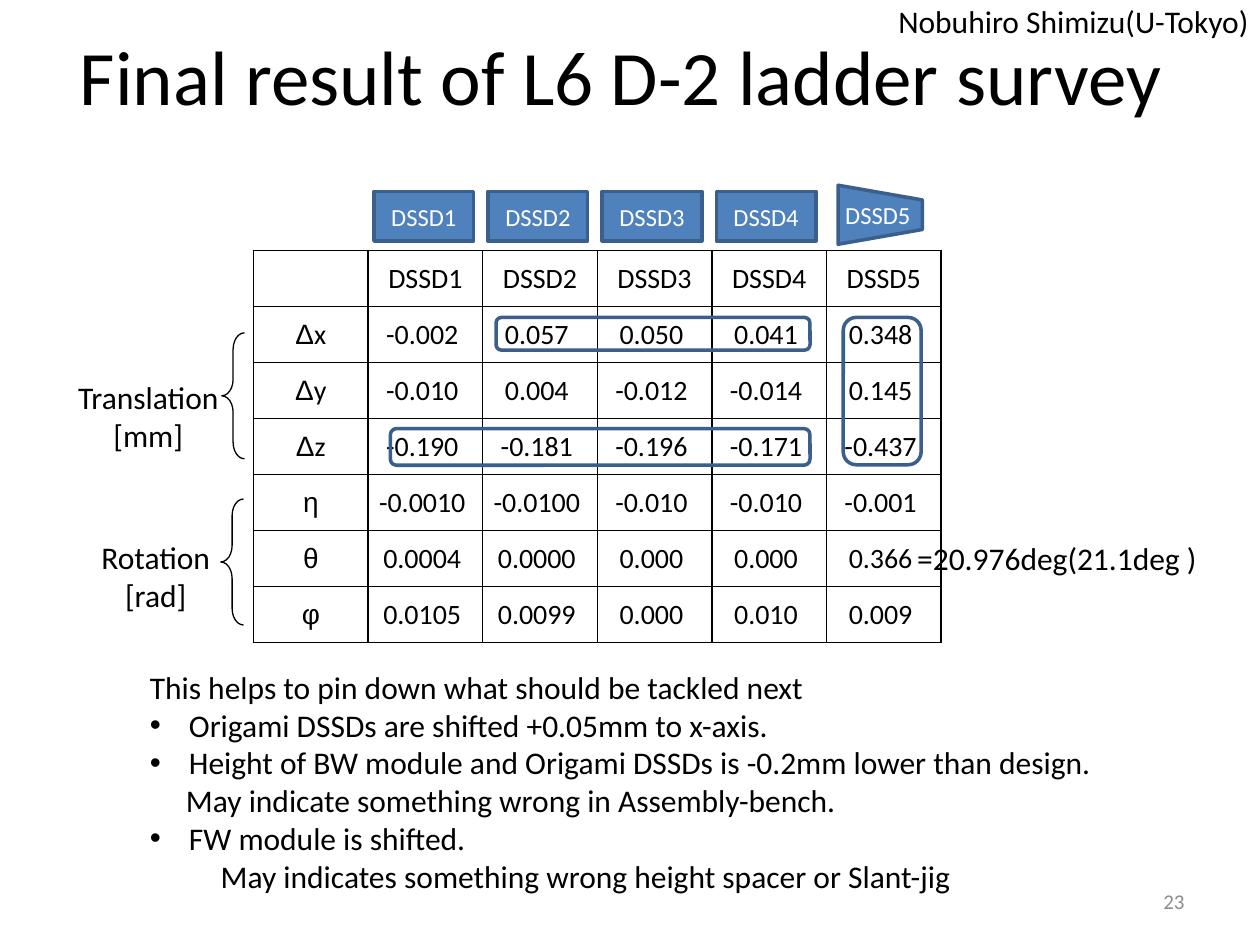
import pptx
import pptx.util
import pptx.dml.color
import pptx.enum.shapes
import pptx.enum.text
import pptx.oxml
import pptx.oxml.ns
import lxml.etree
import dataclasses

Cm = pptx.util.Cm
Pt = pptx.util.Pt
Kind = pptx.enum.shapes.MSO_SHAPE
Side = pptx.enum.text.PP_ALIGN
Mid = pptx.enum.text.MSO_ANCHOR.MIDDLE


@dataclasses.dataclass(frozen=True)
class Theme:
    ink: str = "000000"
    pale: str = "FFFFFF"
    blue: str = "4F81BD"
    edge: str = "3A5F8C"
    gray: str = "8C8C8C"
    face: str = "Calibri"
    greek: str = "Arial"
    head: int = 44
    body: int = 18
    grid: int = 16
    chip: int = 14
    foot: int = 12


def tint(code):
    return pptx.dml.color.RGBColor.from_string(code)


class Deck:
    def __init__(self, theme, slide):
        self.theme = theme
        self.slide = slide

    def run(self, para, text, size, color=None, face=None):
        run = para.add_run()
        run.text = text
        run.font.size = Pt(size)
        run.font.name = face or self.theme.face
        run.font.color.rgb = tint(color or self.theme.ink)

    def text(self, box, lines, size=None, side=Side.LEFT, color=None,
             wrap=False, anchor=pptx.enum.text.MSO_ANCHOR.TOP):
        frame = self.slide.shapes.add_textbox(*map(Cm, box)).text_frame
        frame.word_wrap = wrap
        frame.vertical_anchor = anchor
        for num, line in enumerate(lines):
            para = frame.add_paragraph() if num else frame.paragraphs[0]
            para.alignment = side
            self.run(para, line, size or self.theme.body, color)
        return frame

    def dot(self, para, hang):
        props = para._p.get_or_add_pPr()
        props.set("marL", str(Cm(hang)))
        props.set("indent", str(-Cm(hang)))
        for tag, key, val in (("a:buFont", "typeface", "Arial"),
                              ("a:buChar", "char", "•")):
            node = lxml.etree.SubElement(props, pptx.oxml.ns.qn(tag))
            node.set(key, val)

    def shape(self, kind, box, fill=None, edge=None, width=2, label=None):
        shape = self.slide.shapes.add_shape(kind, *map(Cm, box))
        shape.shadow.inherit = False
        if fill:
            shape.fill.solid()
            shape.fill.fore_color.rgb = tint(fill)
        else:
            shape.fill.background()
        shape.line.color.rgb = tint(edge or self.theme.edge)
        shape.line.width = Pt(width)
        if label:
            shape.text_frame.vertical_anchor = Mid
            para = shape.text_frame.paragraphs[0]
            para.alignment = Side.CENTER
            self.run(para, label, self.theme.chip, self.theme.pale)
        return shape

    def brace(self, box):
        shape = self.shape(Kind.LEFT_BRACE, box, edge=self.theme.ink, width=0.75)
        shape.adjustments[0] = 0.72

    def border(self, cell):
        props = cell._tc.get_or_add_tcPr()
        for side in ("lnL", "lnR", "lnT", "lnB"):
            props.append(pptx.oxml.parse_xml(
                f'<a:{side} {pptx.oxml.ns.nsdecls("a")} w="{Pt(1)}"><a:solidFill>'
                f'<a:srgbClr val="{self.theme.ink}"/></a:solidFill></a:{side}>'))

    def table(self, left, top, wide, high, rows):
        count = len(rows[0])
        table = self.slide.shapes.add_table(
            len(rows), count, Cm(left), Cm(top),
            Cm(wide * count), Cm(high * len(rows))).table
        table.first_row = table.horz_banding = False
        for col in table.columns:
            col.width = Cm(wide)
        for row, cells in zip(table.rows, rows):
            row.height = Cm(high)
            for cell, runs in zip(row.cells, cells):
                cell.margin_left = cell.margin_right = cell.margin_top = Cm(0.03)
                cell.margin_bottom = 0
                cell.vertical_anchor = Mid
                self.border(cell)
                cell.fill.background()
                para = cell.text_frame.paragraphs[0]
                para.alignment = Side.CENTER
                for text, face in runs:
                    self.run(para, text, self.theme.grid, face=face)


def main():
    show = pptx.Presentation()
    show.slide_width, show.slide_height = Cm(25.4), Cm(19.05)
    theme = Theme()
    deck = Deck(theme, show.slides.add_slide(show.slide_layouts[6]))

    deck.text((1.27, -0.08, 22.86, 3.18), ["Final result of L6 D-2 ladder survey "],
              theme.head, Side.CENTER, wrap=True, anchor=Mid)

    parts = [f"DSSD{num}" for num in range(1, 6)]
    data = (
        ("Δx", "-0.002 0.057 0.050 0.041 0.348"),
        ("Δy", "-0.010 0.004 -0.012 -0.014 0.145"),
        ("Δz", "-0.190 -0.181 -0.196 -0.171 -0.437"),
        ("η", "-0.0010 -0.0100 -0.010 -0.010 -0.001"),
        ("θ", "0.0004 0.0000 0.000 0.000 0.366"),
        ("φ", "0.0105 0.0099 0.000 0.010 0.009"),
    )
    rows = [[[]] + [[(part, theme.face)] for part in parts]]
    for name, nums in data:
        label = [(sign, theme.face if sign in "xyz" else theme.greek) for sign in name]
        rows.append([label] + [[(num + " ", theme.face)] for num in nums.split()])
    deck.table(5.11, 5.05, 2.31, 1.13, rows)

    deck.text((17.86, -0.08, 7.85, 1.02), ["Nobuhiro Shimizu(U-Tokyo)"])

    for num, part in enumerate(parts[:4]):
        deck.shape(Kind.RECTANGLE, (7.54 + 2.3 * num, 3.86, 2.01, 1),
                   fill=theme.blue, label=part)
    wedge = deck.shape(Kind.TRAPEZOID, (17.15, 3.48, 1.19, 1.7), fill=theme.blue)
    wedge.rotation = 90
    deck.text((16.79, 3.91, 1.83, 0.86), parts[4:], theme.chip, color=theme.pale)

    deck.text((1.3, 7.49, 3.38, 1.8), ["Translation", "[mm]"], side=Side.CENTER)
    deck.text((1.78, 10.72, 2.72, 1.8), ["Rotation", "[rad]"], side=Side.CENTER)
    deck.brace((4.47, 6.71, 0.46, 2.54))
    deck.brace((4.45, 10.06, 0.46, 2.54))

    for ring in ((7.87, 8.64, 8.46, 0.74), (10, 6.4, 6.33, 0.66),
                 (17, 6.4, 1.57, 2.97)):
        deck.shape(Kind.ROUNDED_RECTANGLE, ring)
    deck.text((18.24, 10.74, 6.22, 1.02), ["=20.976deg(21.1deg )"])

    notes = (
        ("This helps to pin down what should be tackled next", 0),
        ("Origami DSSDs are shifted +0.05mm to x-axis.", None),
        ("Height of BW module and Origami DSSDs is -0.2mm lower than design.", None),
        ("May indicate something wrong in Assembly-bench.", 0.73),
        ("FW module is shifted.", None),
        ("May indicates something wrong height spacer or Slant-jig", 1.43),
    )
    frame = deck.text((2.77, 13.34, 19.74, 4.88), [line for line, _ in notes], wrap=True)
    for para, (_, inset) in zip(frame.paragraphs, notes):
        if inset is None:
            deck.dot(para, 0.79)
        else:
            para._p.get_or_add_pPr().set("marL", str(Cm(inset)))

    deck.text((18.21, 17.65, 5.92, 1.02), ["23"], theme.foot, Side.RIGHT,
              theme.gray, wrap=True, anchor=Mid)
    show.save("out.pptx")


if __name__ == "__main__":
    main()
